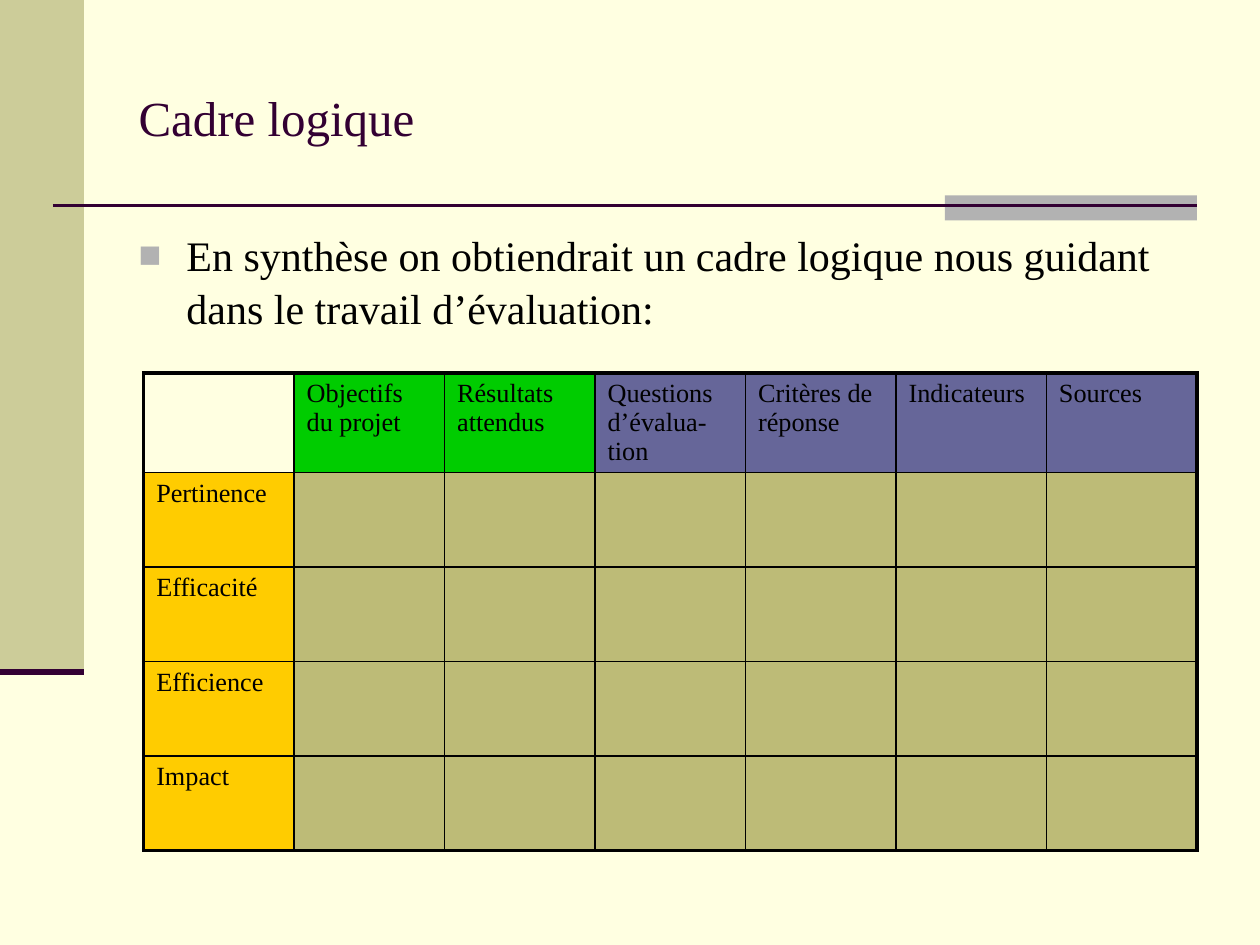
"""Build the "Cadre logique" slide."""
import lxml.etree
import pptx
import pptx.dml.color
import pptx.enum.shapes
import pptx.enum.text
import pptx.oxml.ns
import pptx.util

COLORS = {
    "background": "FFFFE1", "band": "CCCC99", "accent": "B2B2B2", "plum": "330033",
    "black": "000000", "project": "00CC00", "evaluation": "666699",
    "criterion": "FFCC00", "empty": "BDBB77",
}
HEADERS = [
    ("", None),
    ("Objectifs du projet", "project"),
    ("Résultats attendus", "project"),
    ("Questions d’évalua-tion", "evaluation"),
    ("Critères de réponse", "evaluation"),
    ("Indicateurs", "evaluation"),
    ("Sources", "evaluation"),
]
CRITERIA = ["Pertinence", "Efficacité", "Efficience", "Impact"]


def rgb(name):
    """Return the named colour."""
    return pptx.dml.color.RGBColor.from_string(COLORS[name])


def add_element(parent, tag, **attributes):
    """Append a drawing element to a parent."""
    return lxml.etree.SubElement(parent, pptx.oxml.ns.qn(tag), attributes)


def write_text(frame, text, size=15, color="black", before=0, spacing=None):
    """Write one formatted paragraph and return it."""
    paragraph = frame.paragraphs[0]
    paragraph.alignment = pptx.enum.text.PP_ALIGN.LEFT
    paragraph.space_before = pptx.util.Pt(before)
    paragraph.line_spacing = spacing
    run = paragraph.add_run()
    run.text = text
    run.font.name = "Times New Roman"
    run.font.size = pptx.util.Pt(size)
    run.font.color.rgb = rgb(color)
    return paragraph


class SlideBuilder:
    """Hold the style and the current slide, on a grid of 100 columns and 75 rows."""

    def __init__(self, presentation):
        """Add a slide with a title and a body."""
        self.column = presentation.slide_width / 100
        self.row = presentation.slide_height / 75
        self.slide = presentation.slides.add_slide(presentation.slide_layouts[1])
        fill = self.slide.background.fill
        fill.solid()
        fill.fore_color.rgb = rgb("background")

    def place(self, left, top, width, height):
        """Turn grid units into lengths."""
        return (round(left * self.column), round(top * self.row),
                round(width * self.column), round(height * self.row))

    def rectangle(self, box, color):
        """Add a plain filled rectangle."""
        shape = self.slide.shapes.add_shape(
            pptx.enum.shapes.MSO_SHAPE.RECTANGLE, *self.place(*box))
        shape.shadow.inherit = False
        shape.fill.solid()
        shape.fill.fore_color.rgb = rgb(color)
        shape.line.fill.background()

    def line(self, ends, weight):
        """Add a straight plum line."""
        connector = self.slide.shapes.add_connector(
            pptx.enum.shapes.MSO_CONNECTOR.STRAIGHT, *self.place(*ends))
        connector.line.color.rgb = rgb("plum")
        connector.line.width = pptx.util.Pt(weight)
        add_element(connector.element.spPr, "a:effectLst")

    def placeholder(self, index, box, anchor, text, **style):
        """Move a placeholder to the front, fill it and return its paragraph."""
        shape = self.slide.placeholders[index]
        self.slide.shapes.element.append(shape.element)
        shape.left, shape.top, shape.width, shape.height = self.place(*box)
        frame = shape.text_frame
        frame.word_wrap = True
        frame.auto_size = pptx.enum.text.MSO_AUTO_SIZE.NONE
        frame.vertical_anchor = anchor
        return write_text(frame, text, **style)

    def title(self, box, text):
        """Write the title."""
        self.placeholder(0, box, pptx.enum.text.MSO_ANCHOR.MIDDLE, text, size=28, color="plum")

    def bullet(self, box, text):
        """Write the body as one bullet."""
        paragraph = self.placeholder(1, box, pptx.enum.text.MSO_ANCHOR.TOP, text,
                                     size=24, before=4.8, spacing=1.05)
        properties = paragraph._p.get_or_add_pPr()
        indent = pptx.util.Inches(0.38)
        properties.set("marL", str(indent))
        properties.set("indent", str(-indent))
        add_element(add_element(properties, "a:buClr"), "a:srgbClr", val=COLORS["accent"])
        add_element(properties, "a:buSzPct", val="90000")
        add_element(properties, "a:buFont", typeface="Times New Roman")
        add_element(properties, "a:buChar", char="■")

    def cell(self, cell, text, color, outer):
        """Format one cell, with heavy borders on its outer sides."""
        properties = cell._tc.get_or_add_tcPr()
        for side in "LRTB":
            weight = pptx.util.Pt(2.25 if side in outer else 1)
            border = add_element(properties, f"a:ln{side}", w=str(weight))
            add_element(add_element(border, "a:solidFill"), "a:srgbClr", val=COLORS["black"])
        if color:
            cell.fill.solid()
            cell.fill.fore_color.rgb = rgb(color)
        else:
            cell.fill.background()
        if text:
            write_text(cell.text_frame, text, before=3)

    def table(self, box, rows):
        """Add a table of (text, colour) cells with equal rows and columns."""
        last_row, last_column = len(rows) - 1, len(rows[0]) - 1
        table = self.slide.shapes.add_table(
            len(rows), len(rows[0]), *self.place(*box)).table
        table.first_row = table.horz_banding = False
        for row, entries in enumerate(rows):
            for column, (text, color) in enumerate(entries):
                edges = {"L": column == 0, "R": column == last_column,
                         "T": row == 0, "B": row == last_row}
                outer = [side for side, heavy in edges.items() if heavy]
                self.cell(table.cell(row, column), text, color, outer)


def main():
    """Build and save the presentation."""
    presentation = pptx.Presentation()
    presentation.slide_width = pptx.util.Inches(10)
    presentation.slide_height = pptx.util.Inches(7.5)
    builder = SlideBuilder(presentation)
    builder.rectangle((0, 0, 6.67, 53.3), "band")
    builder.rectangle((75, 15.5, 20, 2), "accent")
    builder.line((4.2, 16.3, 95, 16.3), 1.5)
    builder.line((0, 53.3, 6.67, 53.3), 3.5)
    builder.title((10, 3, 85, 12.5), "Cadre logique")
    builder.bullet(
        (10, 17.5, 84.1, 49.5),
        "En synthèse on obtiendrait un cadre logique nous guidant dans le travail d’évaluation:")
    blanks = [("", "empty")] * (len(HEADERS) - 1)
    rows = [HEADERS] + [[(name, "criterion")] + blanks for name in CRITERIA]
    builder.table((11.4, 29.6, 83.6, 37.5), rows)
    presentation.save("out.pptx")


if __name__ == "__main__":
    main()
